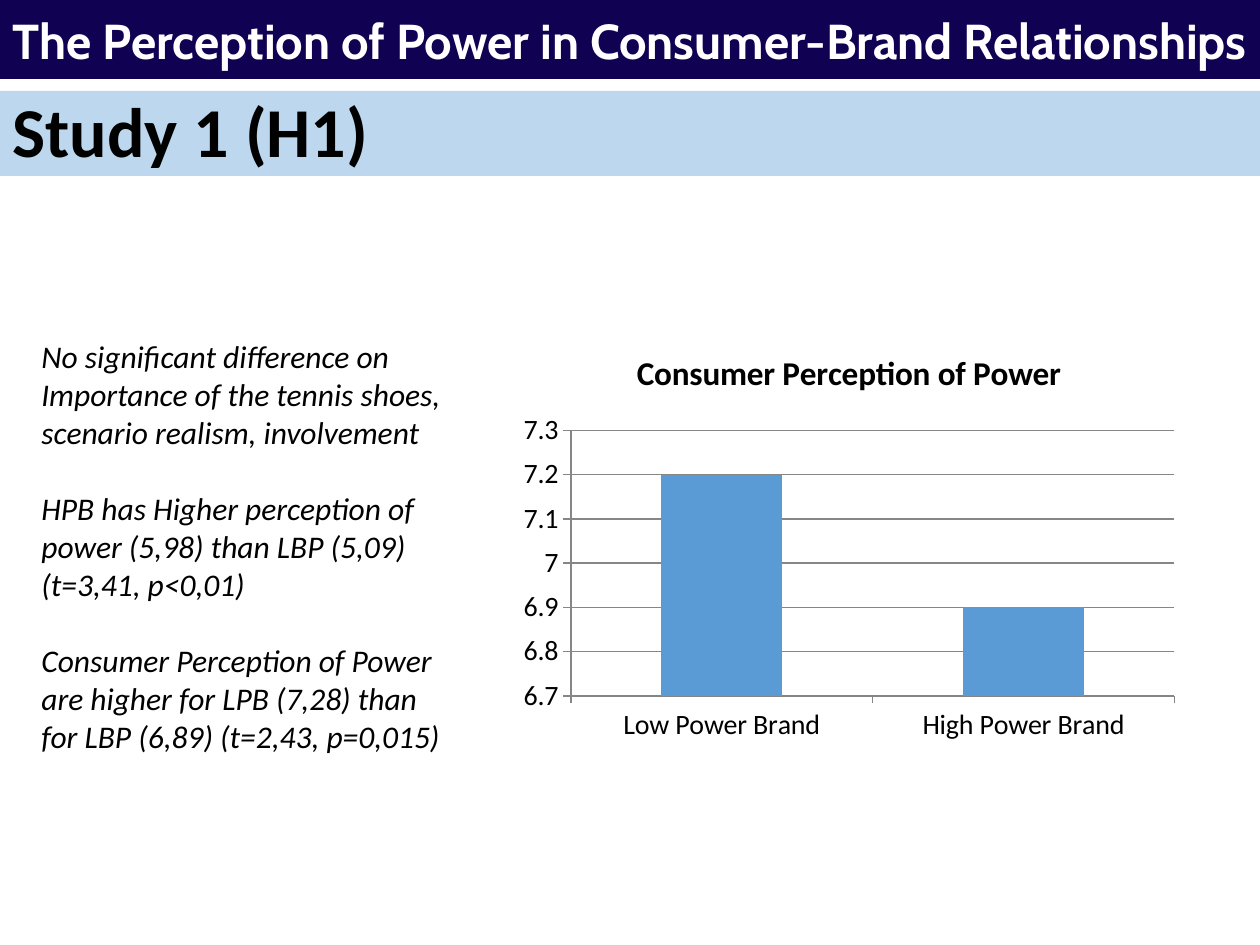
from pptx import Presentation
from pptx.chart.data import CategoryChartData
from pptx.dml.color import RGBColor
from pptx.enum.chart import XL_CHART_TYPE, XL_TICK_MARK
from pptx.enum.text import MSO_ANCHOR, MSO_AUTO_SIZE, PP_ALIGN
from pptx.oxml.xmlchemy import OxmlElement
from pptx.util import Emu, Pt

PX = 914400 // 126
NAVY = RGBColor(0x11, 0x01, 0x53)
PALE_BLUE = RGBColor(0xBD, 0xD7, 0xEE)
BAR_BLUE = RGBColor(0x5B, 0x9B, 0xD5)
GRAY = RGBColor(0x86, 0x86, 0x86)
BLACK = RGBColor(0, 0, 0)
WHITE = RGBColor(255, 255, 255)

CHART_TITLE = "Consumer Perception of Power"
BRAND_POWER = {"Low Power Brand": 7.2, "High Power Brand": 6.9}
FINDINGS = [
    "No significant difference on Importance of the tennis shoes, scenario realism, involvement",
    "HPB has Higher perception of power (5,98) than LBP (5,09) (t=3,41, p<0,01)",
    "Consumer Perception of Power are higher for LPB (7,28) than for LBP (6,89) (t=2,43, p=0,015)",
]


def scaled(box):
    """Turn a box of px lengths into EMU."""
    return [Emu(length * PX) for length in box]


def style_font(font, size, name="Calibri", color=BLACK, bold=False, italic=False):
    """Set every property of a font."""
    font.size, font.name = Pt(size), name
    font.bold, font.italic = bold, italic
    font.color.rgb = color


def write_text(frame, lines, gap=0, spacing=1.0, anchor=MSO_ANCHOR.TOP, **style):
    """Write each line as a left-aligned paragraph, with a gap between them."""
    frame.word_wrap = True
    frame.auto_size = MSO_AUTO_SIZE.NONE
    frame.vertical_anchor = anchor
    for index, line in enumerate(lines):
        para = frame.add_paragraph() if index else frame.paragraphs[0]
        para.alignment = PP_ALIGN.LEFT
        para.line_spacing = spacing
        para.space_before = Pt(gap if index else 0)
        span = para.add_run()
        span.text = line
        style_font(span.font, **style)


def place_band(holder, box, fill):
    """Move a placeholder to a box and give it a solid fill."""
    holder.left, holder.top, holder.width, holder.height = scaled(box)
    holder.fill.solid()
    holder.fill.fore_color.rgb = fill


def add_banner(page, box, text):
    """Turn the title placeholder into the dark top banner."""
    title = page.shapes.title
    place_band(title, box, NAVY)
    title.text_frame.margin_right = 0
    write_text(title.text_frame, [text], anchor=MSO_ANCHOR.MIDDLE,
               size=28, name="Cabin", color=WHITE, bold=True)


def add_heading(page, box, text):
    """Turn the body placeholder into the pale heading band."""
    body = page.placeholders[1]
    place_band(body, box, PALE_BLUE)
    write_text(body.text_frame, [text], spacing=0.9, size=40, bold=True)
    properties = body.text_frame.paragraphs[0]._p.get_or_add_pPr()
    properties.set("marL", "0")
    properties.set("indent", "0")
    properties.append(OxmlElement("a:buNone"))


def add_findings(page, box, lines):
    """Add the italic column of findings."""
    column = page.shapes.add_textbox(*scaled(box))
    write_text(column.text_frame, lines, gap=22, size=18, italic=True)


def add_power_chart(page, box, title, values):
    """Add the column chart of perceived power by brand."""
    data = CategoryChartData()
    data.categories = values.keys()
    data.add_series(title, values.values())
    chart = page.shapes.add_chart(XL_CHART_TYPE.COLUMN_CLUSTERED, *scaled(box), data).chart
    style_font(chart.font, 16)
    chart.has_legend = False
    chart.has_title = True
    chart.chart_title.include_in_layout = False
    write_chart_title = chart.chart_title.text_frame.paragraphs[0].add_run()
    write_chart_title.text = title
    style_font(write_chart_title.font, 19, bold=True)

    plot = chart.plots[0]
    plot.gap_width = 150
    plot.vary_by_categories = False
    bars = plot.series[0].format.fill
    bars.solid()
    bars.fore_color.rgb = BAR_BLUE

    scale = chart.value_axis
    scale.minimum_scale, scale.maximum_scale, scale.major_unit = 6.7, 7.3, 0.1
    scale.has_major_gridlines = True
    scale.tick_labels.number_format = "General"
    scale.tick_labels.number_format_is_linked = False
    for axis in (chart.category_axis, scale):
        axis.major_tick_mark = XL_TICK_MARK.OUTSIDE
        axis.minor_tick_mark = XL_TICK_MARK.NONE
    for part in (chart.category_axis, scale, scale.major_gridlines):
        part.format.line.color.rgb = GRAY
        part.format.line.width = Pt(0.75)


def main():
    """Build the study slide and save it."""
    deck = Presentation()
    deck.slide_width, deck.slide_height = scaled((1260, 945))
    page = deck.slides.add_slide(deck.slide_layouts[1])
    add_heading(page, (0, 91, 1260, 85), "Study 1 (H1)")
    add_findings(page, (29, 331, 431, 432), FINDINGS)
    add_banner(page, (0, 0, 1260, 79), "The Perception of Power in Consumer-Brand Relationships")
    add_power_chart(page, (510, 329, 678, 422), CHART_TITLE, BRAND_POWER)
    deck.save("out.pptx")


if __name__ == "__main__":
    main()
